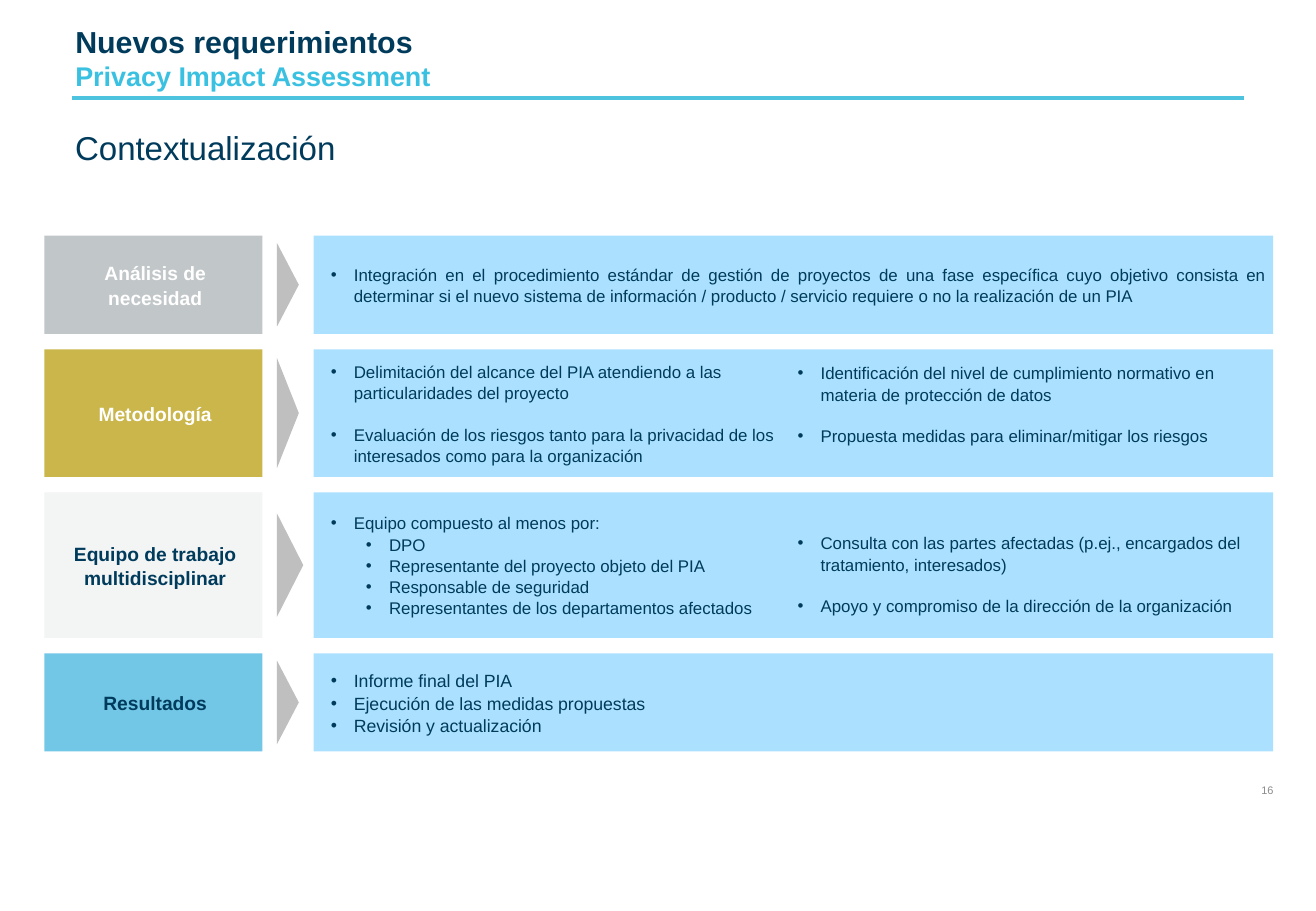
from dataclasses import dataclass

from lxml import etree
from pptx import Presentation
from pptx import util as u
from pptx.dml.color import RGBColor
from pptx.enum import shapes, text
from pptx.oxml import ns

NAVY = RGBColor(0x00, 0x3B, 0x5C)
CYAN = RGBColor(0x3A, 0xC1, 0xE1)
RULE = RGBColor(0x4E, 0xC3, 0xE0)
WHITE = RGBColor(0xFF, 0xFF, 0xFF)
SILVER = RGBColor(0xC1, 0xC6, 0xC8)
GOLD = RGBColor(0xCA, 0xB6, 0x4B)
PEARL = RGBColor(0xF3, 0xF4, 0xF4)
SKY = RGBColor(0x72, 0xC7, 0xE7)
PALE = RGBColor(0xAB, 0xE1, 0xFF)
ARROW = RGBColor(0xBF, 0xBF, 0xBF)
GREY = RGBColor(0x8C, 0x8C, 0x8C)

LEFT, CENTER, RIGHT, JUSTIFY = (text.PP_ALIGN.LEFT, text.PP_ALIGN.CENTER,
                                text.PP_ALIGN.RIGHT, text.PP_ALIGN.JUSTIFY)
TOP, MIDDLE, BOTTOM = (text.MSO_ANCHOR.TOP, text.MSO_ANCHOR.MIDDLE,
                       text.MSO_ANCHOR.BOTTOM)

LABEL_X, LABEL_WIDTH = 3.37, 16.57
ARROW_X = 21.05
PANEL_X, PANEL_WIDTH = 23.84, 72.9
SECOND_X = 60.6
FIRST_ROW, ROW_GAP = 25.88, 1.7
COLUMN_HEIGHT = 11.2


@dataclass
class Line:
    words: str
    size: float = 10
    color: RGBColor = NAVY
    bold: bool = False
    align: int = LEFT
    spacing: float = 1.05
    before: float = 0
    indent: float = 0


@dataclass
class Row:
    label: str
    fill: RGBColor
    ink: RGBColor
    height: float
    arrow: tuple
    first: list
    second: tuple = ()
    second_anchor: int = TOP


def point(words, **style):
    return Line(words, **{"indent": 0.19, **style})


def member(words):
    return point(words, indent=0.48)


class Slide:
    font = "Arial"

    def __init__(self, deck):
        self.deck = deck
        self.slide = deck.slides.add_slide(deck.slide_layouts[5])

    def x(self, share):
        return round(self.deck.slide_width * share / 100)

    def y(self, share):
        return round(self.deck.slide_height * share / 100)

    def box(self, left, top, width, height):
        return self.x(left), self.y(top), self.x(width), self.y(height)

    def fill_text(self, holder, lines, anchor=TOP, insets=(0.1, 0.05, 0.1, 0.05)):
        frame = holder.text_frame
        sides = ("margin_left", "margin_top", "margin_right", "margin_bottom")
        settings = {"word_wrap": True, "auto_size": text.MSO_AUTO_SIZE.NONE,
                    "vertical_anchor": anchor,
                    **{side: u.Inches(inset) for side, inset in zip(sides, insets)}}
        for name, value in settings.items():
            setattr(frame, name, value)
        for number, line in enumerate(lines):
            paragraph = frame.add_paragraph() if number else frame.paragraphs[0]
            self.bullet(paragraph, line)
            layout = {"alignment": line.align, "line_spacing": line.spacing}
            if number:
                layout["space_before"] = u.Pt(line.before)
            for name, value in layout.items():
                setattr(paragraph, name, value)
            run = paragraph.add_run()
            run.text = line.words
            style = {"name": self.font, "size": u.Pt(line.size), "bold": line.bold}
            for name, value in style.items():
                setattr(run.font, name, value)
            run.font.color.rgb = line.color

    def bullet(self, paragraph, line):
        if not line.indent:
            return
        properties = paragraph._p.get_or_add_pPr()
        properties.set("marL", str(u.Inches(line.indent)))
        properties.set("indent", str(u.Inches(-0.19)))
        color = etree.SubElement(properties, ns.qn("a:buClr"))
        etree.SubElement(color, ns.qn("a:srgbClr"), val=str(line.color))
        etree.SubElement(properties, ns.qn("a:buFont"), typeface=self.font)
        etree.SubElement(properties, ns.qn("a:buChar"), char="•")

    def paint(self, shape, fill):
        shape.shadow.inherit = False
        shape.fill.solid()
        shape.fill.fore_color.rgb = fill
        shape.line.fill.background()

    def title(self, place, lines):
        heading = self.slide.shapes.title
        for name, value in zip(("left", "top", "width", "height"), self.box(*place)):
            setattr(heading, name, value)
        self.fill_text(heading, lines, BOTTOM)

    def words(self, place, lines, **layout):
        self.fill_text(self.slide.shapes.add_textbox(*self.box(*place)), lines, **layout)

    def block(self, place, fill, lines, insets):
        block = self.slide.shapes.add_shape(
            shapes.MSO_SHAPE.RECTANGLE, *self.box(*place))
        self.paint(block, fill)
        self.fill_text(block, lines, MIDDLE, insets)

    def rule(self, start, end, level, color, width):
        rule = self.slide.shapes.add_connector(
            shapes.MSO_CONNECTOR.STRAIGHT,
            self.x(start), self.y(level), self.x(end), self.y(level))
        rule.line.color.rgb = color
        rule.line.width = u.Pt(width)
        etree.SubElement(rule._element.spPr, ns.qn("a:effectLst"))

    def arrow(self, left, middle, width, height):
        top, bottom = self.y(middle - height / 2), self.y(middle + height / 2)
        outline = self.slide.shapes.build_freeform(self.x(left), top)
        outline.add_line_segments(
            [(self.x(left + width), self.y(middle)), (self.x(left), bottom)])
        self.paint(outline.convert_to_shape(), ARROW)

    def row(self, top, row):
        middle = top + row.height / 2
        self.block((LABEL_X, top, LABEL_WIDTH, row.height), row.fill,
                   [Line(row.label, 11.4, row.ink, True, CENTER)], (0.14, 0, 0.11, 0))
        right_inset = 3.91 if row.second else 0.07
        self.block((PANEL_X, top, PANEL_WIDTH, row.height), PALE, row.first,
                   (0.14, 0.1, right_inset, 0.1))
        if row.second:
            self.words((SECOND_X, middle - COLUMN_HEIGHT / 2,
                        PANEL_X + PANEL_WIDTH - SECOND_X, COLUMN_HEIGHT),
                       row.second, anchor=row.second_anchor, insets=(0, 0, 0.07, 0))
        width, share = row.arrow
        self.arrow(ARROW_X, middle, width, row.height * share)


ROWS = [
    Row("Análisis de necesidad", SILVER, WHITE, 10.77, (1.66, 0.85), [
        point("Integración en el procedimiento estándar de gestión de proyectos de una "
              "fase específica cuyo objetivo consista en determinar si el nuevo sistema "
              "de información / producto / servicio requiere o no la realización de un "
              "PIA", align=JUSTIFY)]),
    Row("Metodología", GOLD, WHITE, 14, (1.66, 0.86), [
        point("Delimitación del alcance del PIA atendiendo a las particularidades del "
              "proyecto"),
        point("Evaluación de los riesgos tanto para la privacidad de los interesados "
              "como para la organización", before=12)], [
        point("Identificación del nivel de cumplimiento normativo en materia de "
              "protección de datos"),
        point("Propuesta medidas para eliminar/mitigar los riesgos", before=12)]),
    Row("Equipo de trabajo multidisciplinar", PEARL, NAVY, 15.97, (2, 0.71), [
        point("Equipo compuesto al menos por:"),
        member("DPO"),
        member("Representante del proyecto objeto del PIA"),
        member("Responsable de seguridad"),
        member("Representantes de los departamentos afectados")], [
        point("Consulta con las partes afectadas (p.ej., encargados del tratamiento, "
              "interesados)"),
        point("Apoyo y compromiso de la dirección de la organización", before=12)],
        BOTTOM),
    Row("Resultados", SKY, NAVY, 10.77, (1.66, 0.85), [
        point(result, size=10.5) for result in (
            "Informe final del PIA", "Ejecución de las medidas propuestas",
            "Revisión y actualización")]),
]


def main():
    deck = Presentation()
    deck.slide_width, deck.slide_height = u.Inches(10.83), u.Inches(7.5)
    page = Slide(deck)
    page.rule(5.47, 94.55, 10.75, RULE, 2.25)
    page.title((4.8, 3.2, 90.86, 7.6), [
        Line("Nuevos requerimientos", 18, NAVY, True, spacing=1),
        Line("Privacy Impact Assessment", 16, CYAN, True, spacing=1)])
    page.words((4.8, 13.07, 93.54, 5.33), [Line("Contextualización", 19.6)])
    top = FIRST_ROW
    for row in ROWS:
        page.row(top, row)
        top += row.height + ROW_GAP
    page.words((90.21, 85.47, 6.56, 2), [Line("16", 6.5, GREY, align=RIGHT, spacing=1)],
               anchor=BOTTOM, insets=(0, 0, 0, 0))
    deck.save("out.pptx")


if __name__ == "__main__":
    main()
